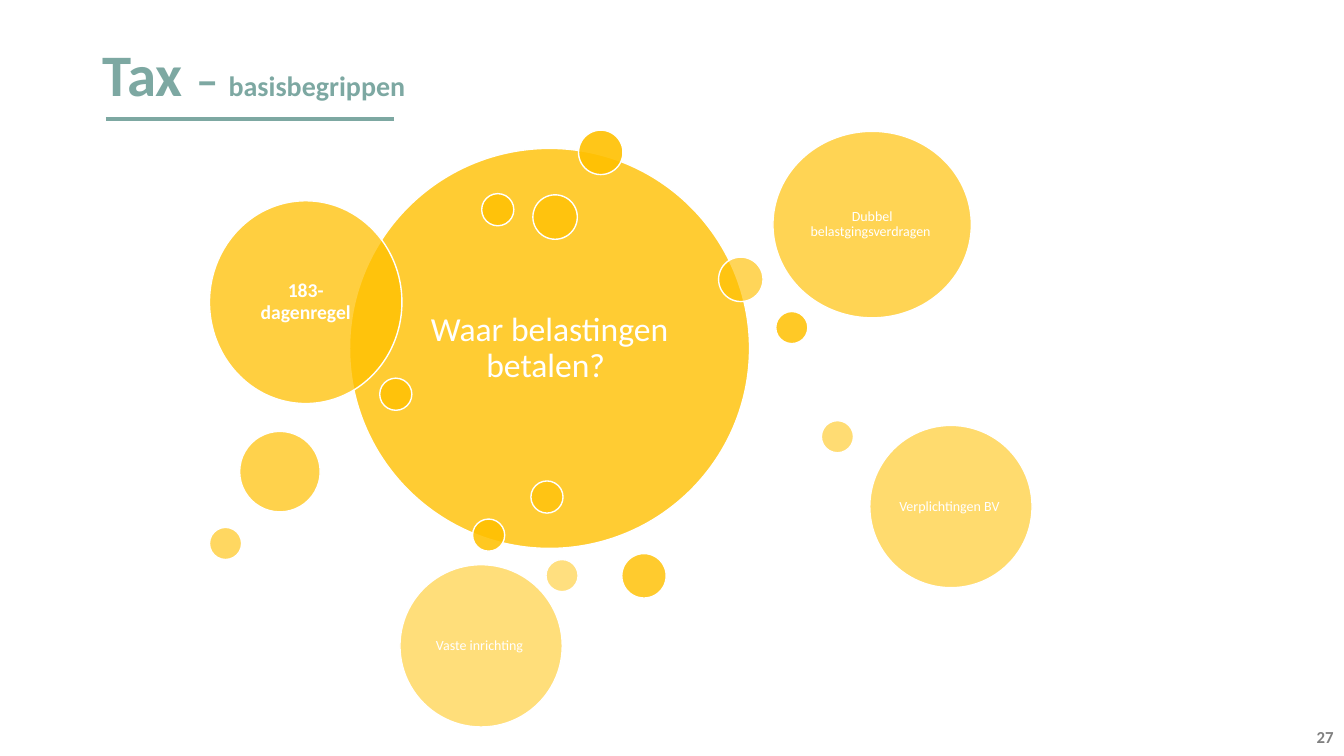
import pptx
import pptx.util
import pptx.dml.color
import pptx.enum.shapes
import pptx.enum.text
import pptx.oxml
import pptx.oxml.ns

Cm = pptx.util.Cm
Pt = pptx.util.Pt
qn = pptx.oxml.ns.qn
ALIGN = pptx.enum.text.PP_ALIGN
ANCHOR = pptx.enum.text.MSO_ANCHOR

COLOURS = {"teal": "7DA8A2", "amber": "FFC000", "white": "FFFFFF", "grey": "808080"}
FONT = "Calibri"
SMALL, MEDIUM = 0.81, 1.12

MAIN_BUBBLE = (3.53, 0.46, 10.08, 10.08, "Waar belastingen betalen? ", 24, False, 0.25)
BUBBLES = [
    (9.3, 0, MEDIUM, MEDIUM),
    (6.63, 9.8, SMALL, SMALL),
    (14.27, 4.57, SMALL, SMALL),
    (10.39, 10.67, MEDIUM, MEDIUM),
    (6.86, 1.6, SMALL, SMALL),
    (4.29, 6.25, SMALL, SMALL),
    (0, 1.78, 4.85, 5.11, "183-dagenregel", 14, True, 0.15),
    (8.15, 1.63, MEDIUM, MEDIUM),
    (0.76, 7.59, 2.03, 2.03),
    (14.2, 0.03, 5, 4.7, "Dubbel belastgingsverdragen ", 10, False, 0.1),
    (12.83, 3.2, MEDIUM, MEDIUM),
    (0, 10.01, SMALL, SMALL),
    (8.1, 8.84, SMALL, SMALL),
    (16.64, 7.44, 4.09, 4.09, "Verplichtingen BV ", 10, False, 0.1),
    (15.42, 7.32, SMALL, SMALL),
    (4.8, 10.95, 4.09, 4.09, "Vaste inrichting ", 10, False, 0.1),
    (8.48, 10.82, SMALL, SMALL),
]


def rgb(name):
    return pptx.dml.color.RGBColor.from_string(COLOURS[name])


def style_span(span, size, colour, bold):
    span.font.name = FONT
    span.font.size = Pt(size)
    span.font.bold = bold
    span.font.color.rgb = rgb(colour)


def add_title(page, left, top, width, height):
    box = page.shapes.add_textbox(Cm(left), Cm(top), Cm(width), Cm(height))
    box.text_frame.word_wrap = True
    para = box.text_frame.paragraphs[0]
    para.line_spacing = 0.9
    for words, size in (("Tax ", 42), ("– ", 32), ("basisbegrippen", 20)):
        span = para.add_run()
        span.text = words
        style_span(span, size, "teal", True)

    rule_left, rule_top = Cm(left + 0.33), Cm(top + 1.98)
    rule = page.shapes.add_connector(
        pptx.enum.shapes.MSO_CONNECTOR.STRAIGHT,
        rule_left, rule_top, rule_left + Cm(7.26), rule_top)
    rule.line.color.rgb = rgb("teal")
    rule.line.width = Pt(2.25)
    pptx.oxml.ns.qn("a:effectLst")
    rule._element.spPr.append(rule._element.spPr.makeelement(qn("a:effectLst"), {}))


def add_bubble(page, left, top, width, height, opacity,
               words="", size=10, bold=False, inset=0.1):
    bubble = page.shapes.add_shape(
        pptx.enum.shapes.MSO_SHAPE.OVAL, Cm(left), Cm(top), Cm(width), Cm(height))
    bubble.shadow.inherit = False
    bubble.fill.solid()
    bubble.fill.fore_color.rgb = rgb("amber")
    colour = bubble._element.spPr.find(qn("a:solidFill"))[0]
    colour.append(colour.makeelement(qn("a:alpha"), {"val": str(int(opacity * 1000))}))
    bubble.line.color.rgb = rgb("white")
    bubble.line.width = Pt(1)
    if words:
        frame = bubble.text_frame
        frame.text = words
        frame.word_wrap = True
        frame.vertical_anchor = ANCHOR.MIDDLE
        frame.margin_left = frame.margin_right = Cm(inset)
        frame.margin_top = frame.margin_bottom = Cm(inset)
        para = frame.paragraphs[0]
        para.alignment = ALIGN.CENTER
        para.line_spacing = 0.9
        style_span(para.runs[0], size, "white", bold)


def add_bubble_cloud(page, left, top):
    opacities = [80] + [90 - 2.5 * step for step in range(len(BUBBLES))]
    for (x, y, width, height, *label), opacity in zip([MAIN_BUBBLE] + BUBBLES, opacities):
        add_bubble(page, left + x, top + y, width, height, opacity, *label)


def add_page_number(page, left, top, width, height):
    box = page.shapes.add_textbox(Cm(left), Cm(top), Cm(width), Cm(height))
    frame = box.text_frame
    frame.text = "27"
    frame.word_wrap = True
    frame.vertical_anchor = ANCHOR.MIDDLE
    para = frame.paragraphs[0]
    para.alignment = ALIGN.RIGHT
    style_span(para.runs[0], 12, "grey", True)


def main():
    deck = pptx.Presentation()
    deck.slide_width, deck.slide_height = Cm(33.87), Cm(19.05)
    page = deck.slides.add_slide(deck.slide_layouts[6])
    add_title(page, 2.34, 1.02, 29.21, 2.51)
    add_bubble_cloud(page, 5.28, 3.28)
    add_page_number(page, 26.24, 18.06, 7.62, 1.02)
    deck.save("out.pptx")


if __name__ == "__main__":
    main()
